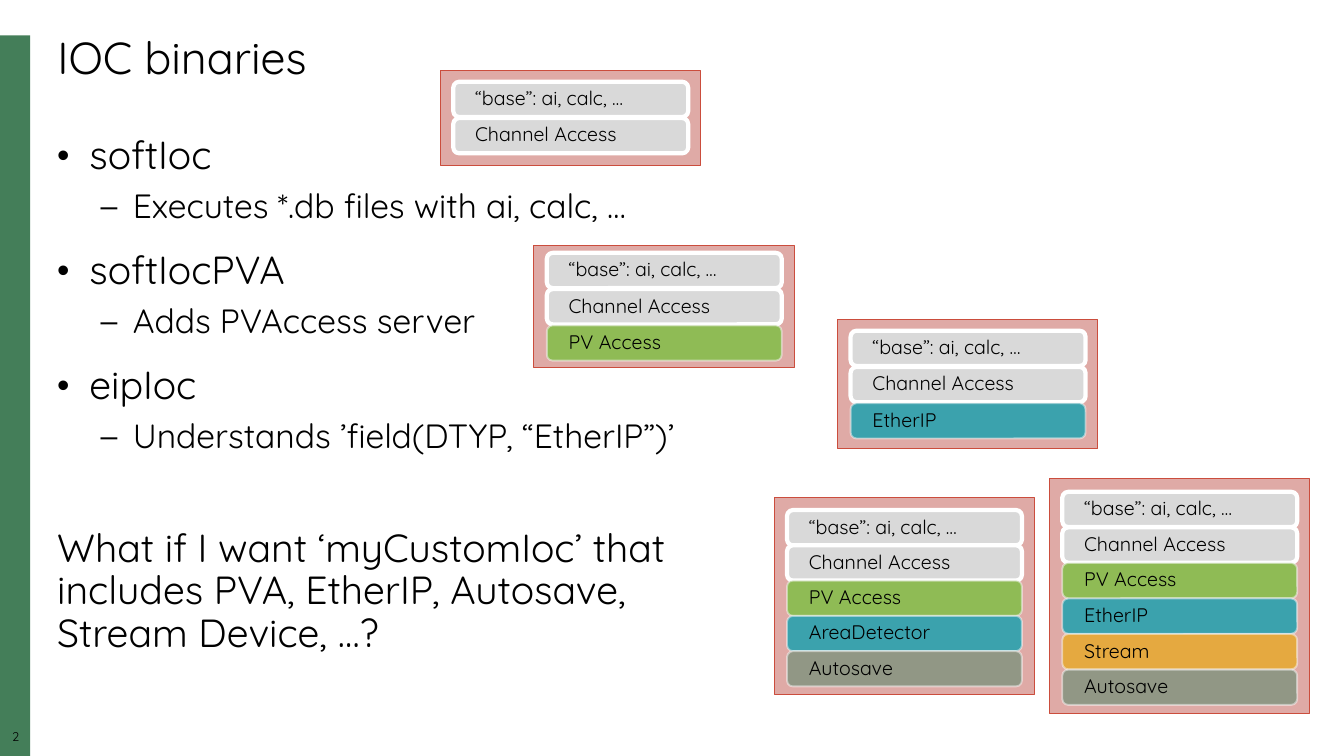
"""Build the slide about IOC binaries and the modules each one contains."""
from lxml import etree
from pptx import Presentation
from pptx.dml.color import RGBColor
from pptx.enum.shapes import MSO_SHAPE
from pptx.enum.text import MSO_ANCHOR, MSO_AUTO_SIZE, PP_ALIGN
from pptx.oxml.ns import qn
from pptx.util import Pt

RECTANGLE = MSO_SHAPE.RECTANGLE
ROUNDED = MSO_SHAPE.ROUNDED_RECTANGLE
TOP, MIDDLE = MSO_ANCHOR.TOP, MSO_ANCHOR.MIDDLE
LEFT, CENTER = PP_ALIGN.LEFT, PP_ALIGN.CENTER
NO_AUTOFIT = MSO_AUTO_SIZE.NONE

FONT = "Quicksand"
FRAME_WIDTH = 185.8
LAYER_WIDTH, LAYER_HEIGHT = 167.8, 25.2
LAYER_INDENT = 9.2

BASE = [("“base”: ai, calc, …", "D9D9D9"), ("Channel Access", "D9D9D9")]
PV_ACCESS = ("PV Access", "8FBB55")
ETHER_IP = ("EtherIP", "3BA2AD")
AREA_DETECTOR = ("AreaDetector", "3BA2AD")
STREAM = ("Stream", "E5A940")
AUTOSAVE = ("Autosave", "919785")

# left, top, height, offset of the first layer, layer pitch, layers
STACKS = [
    (314.6, 50.4, 67.7, 8, 25.9, BASE),
    (381.4, 175.7, 87.1, 4.9, 25.9, BASE + [PV_ACCESS]),
    (598.4, 228.2, 92.2, 8, 25.9, BASE + [ETHER_IP]),
    (553, 355.7, 140.4, 8.6, 25.2, BASE + [PV_ACCESS, AREA_DETECTOR, AUTOSAVE]),
    (749.6, 342, 167.8, 9.3, 25.4, BASE + [PV_ACCESS, ETHER_IP, STREAM, AUTOSAVE]),
]

# text, size, left margin, bullet, space before
BODY = [
    ("softIoc", 28, 23, "•", 0),
    ("Executes *.db files with ai, calc, …", 24, 54, "–", 8),
    ("softIocPVA", 28, 23, "•", 18),
    ("Adds PVAccess server", 24, 54, "–", 8),
    ("eipIoc", 28, 23, "•", 18),
    ("Understands ’field(DTYP, “EtherIP”)’", 24, 54, "–", 8),
    ("What if I want ‘myCustomIoc’ that includes PVA, EtherIP, "
     "Autosave, Stream Device, …?", 28, 0, None, 52),
]


def color(value):
    """Turn a hex string into a colour."""
    return RGBColor.from_string(value)


def style_paragraph(paragraph, text, size, alignment=LEFT):
    """Write a paragraph in the slide's font and line spacing."""
    paragraph.text = text
    paragraph.alignment = alignment
    paragraph.line_spacing = 0.9
    paragraph.font.size = Pt(size)
    paragraph.font.name = FONT
    paragraph.font.color.rgb = color("000000")


def add_bullet(paragraph, character, margin):
    """Give a paragraph a hanging bullet."""
    properties = paragraph._p.get_or_add_pPr()
    properties.set("marL", str(Pt(margin)))
    properties.set("indent", str(-Pt(23)))
    bullet_color = etree.SubElement(properties, qn("a:buClr"))
    etree.SubElement(bullet_color, qn("a:srgbClr"), val="000000")
    etree.SubElement(properties, qn("a:buSzPct"), val="90000")
    etree.SubElement(properties, qn("a:buFont"), typeface="Arial")
    etree.SubElement(properties, qn("a:buChar"), char=character)


def set_frame(text_frame, anchor, horizontal=7.2, vertical=3.6):
    """Set wrapping, anchor and insets of a text frame."""
    text_frame.word_wrap = True
    text_frame.auto_size = NO_AUTOFIT
    text_frame.vertical_anchor = anchor
    text_frame.margin_left = text_frame.margin_right = Pt(horizontal)
    text_frame.margin_top = text_frame.margin_bottom = Pt(vertical)


def add_box(slide, kind, left, top, width, height, fill, line=None, weight=0.75):
    """Add a filled preset shape with an optional outline."""
    shape = slide.shapes.add_shape(kind, Pt(left), Pt(top), Pt(width), Pt(height))
    shape.shadow.inherit = False
    shape.fill.solid()
    shape.fill.fore_color.rgb = color(fill)
    if line:
        shape.line.color.rgb = color(line)
        shape.line.width = Pt(weight)
    else:
        shape.line.fill.background()
    return shape


def add_layer(slide, left, top, text, fill):
    """Add one module of a binary, with a heavier outline for base modules."""
    is_base = (text, fill) in BASE
    line, weight = ("FFFFFF", 3) if is_base else ("F9F9F9", 1.35)
    shape = add_box(slide, ROUNDED, left, top, LAYER_WIDTH, LAYER_HEIGHT,
                    fill, line, weight)
    if not is_base:
        line_color = shape.line._ln.find(".//" + qn("a:srgbClr"))
        etree.SubElement(line_color, qn("a:alpha"), val="50000")
    set_frame(shape.text_frame, MIDDLE, 14.4, 0)
    style_paragraph(shape.text_frame.paragraphs[0], text, 14)


def add_stack(slide, left, top, height, offset, pitch, layers):
    """Add a binary as a frame around its stacked modules."""
    add_box(slide, RECTANGLE, left, top, FRAME_WIDTH, height, "DFAAA6", "CB4D3D")
    for index, (text, fill) in enumerate(layers):
        add_layer(slide, left + LAYER_INDENT, top + offset + index * pitch, text, fill)


def set_title(slide, text):
    """Place and fill the title placeholder."""
    title = slide.shapes.title
    title.left, title.top, title.width, title.height = Pt(33.8), Pt(21.6), Pt(900), Pt(42.5)
    set_frame(title.text_frame, TOP)
    style_paragraph(title.text_frame.paragraphs[0], text, 32)


def add_body(slide):
    """Add the bulleted list and the closing question."""
    box = slide.shapes.add_textbox(Pt(33.8), Pt(93.6), Pt(512.6), Pt(350.6))
    set_frame(box.text_frame, TOP)
    for index, (text, size, margin, bullet, space) in enumerate(BODY):
        paragraph = box.text_frame.paragraphs[0] if index == 0 else box.text_frame.add_paragraph()
        if bullet:
            add_bullet(paragraph, bullet, margin)
        style_paragraph(paragraph, text, size)
        if space:
            paragraph.space_before = Pt(space)


def add_slide_number(slide, number):
    """Add the slide number at the foot of the side bar."""
    box = slide.shapes.add_textbox(Pt(0), Pt(522), Pt(22.3), Pt(12.2))
    set_frame(box.text_frame, TOP, 0, 0)
    style_paragraph(box.text_frame.paragraphs[0], number, 9, CENTER)


def main():
    """Build and save the presentation."""
    presentation = Presentation()
    presentation.slide_width, presentation.slide_height = Pt(960), Pt(540)
    slide = presentation.slides.add_slide(presentation.slide_layouts[5])
    add_box(slide, RECTANGLE, 0, 25.2, 21.6, 514.8, "447E59")
    add_slide_number(slide, "2")
    set_title(slide, "IOC binaries")
    add_body(slide)
    for stack in STACKS:
        add_stack(slide, *stack)
    presentation.save("out.pptx")


if __name__ == "__main__":
    main()
